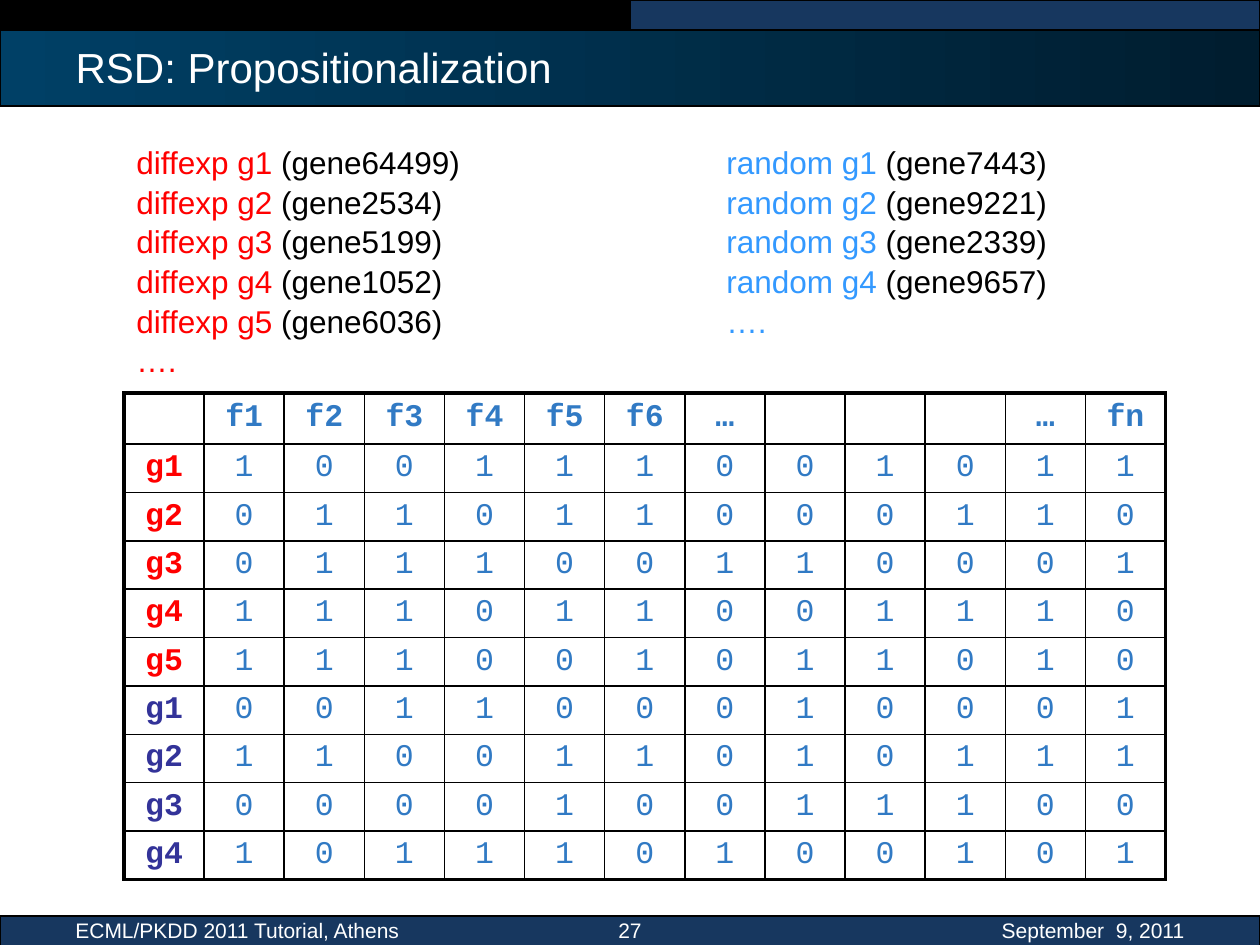
import pptx
import pptx.dml.color
import pptx.enum.shapes
import pptx.enum.text
import pptx.oxml
import pptx.oxml.ns
import pptx.util

PX = 914400 / 126
COLORS = {
    "black": "000000", "white": "FFFFFF", "navy": "17375F",
    "band_start": "004066", "band_end": "001D2F",
    "red": "FF0000", "sky": "3399FF", "indigo": "333399", "blue": "317AC4",
}
ALIGN = pptx.enum.text.PP_ALIGN
ANCHOR = pptx.enum.text.MSO_ANCHOR

DIFFEXP = ["gene64499", "gene2534", "gene5199", "gene1052", "gene6036"]
RANDOM = ["gene7443", "gene9221", "gene2339", "gene9657"]
FEATURES = ["f1", "f2", "f3", "f4", "f5", "f6", "…", "", "", "", "…", "fn"]
MATRIX = [
    ("g1", "red", "100111001011"),
    ("g2", "red", "011011000110"),
    ("g3", "red", "011100110001"),
    ("g4", "red", "111011001110"),
    ("g5", "red", "111001011010"),
    ("g1", "indigo", "001100010001"),
    ("g2", "indigo", "110011010111"),
    ("g3", "indigo", "000010011100"),
    ("g4", "indigo", "101110100101"),
]


def emu(box):
    return [pptx.util.Emu(round(length * PX)) for length in box]


def rgb(name):
    return pptx.dml.color.RGBColor.from_string(COLORS[name])


def add_span(para, text, size, color, font="Arial", bold=False):
    span = para.add_run()
    span.text = text
    span.font.size = pptx.util.Pt(size)
    span.font.name = font
    span.font.bold = bold
    span.font.color.rgb = rgb(color)


def add_text_frame(page, box):
    frame = page.shapes.add_textbox(*emu(box)).text_frame
    frame.word_wrap = True
    return frame


def add_band(page, box, colors):
    """Draw an outlined bar; two colours make a left-to-right gradient."""
    band = page.shapes.add_shape(pptx.enum.shapes.MSO_SHAPE.RECTANGLE, *emu(box))
    band.shadow.inherit = False
    band.line.color.rgb = rgb("black")
    band.line.width = pptx.util.Pt(0.75)
    if len(colors) == 1:
        band.fill.solid()
        band.fill.fore_color.rgb = rgb(colors[0])
    else:
        band.fill.gradient()
        band.fill.gradient_angle = 0
        for stop, color in zip(band.fill.gradient_stops, colors):
            stop.color.rgb = rgb(color)
    return band


def add_header(page, box, text):
    left, top, width, height = box
    half = width // 2
    title_band = add_band(page, (left, top + 26, width, height - 26),
                          ["band_start", "band_end"])
    add_band(page, (left, top, half, 30), ["black"])
    add_band(page, (left + half, top, half, 30), ["navy"])
    title = page.shapes.title
    title_band.element.addnext(title.element)
    title.left, title.top, title.width, title.height = emu(
        (left + 63, top + 38, width - 126, 57))
    title.text_frame.vertical_anchor = ANCHOR.MIDDLE
    para = title.text_frame.paragraphs[0]
    para.alignment = ALIGN.LEFT
    add_span(para, text, 24, "white")


def add_footer(page, box, entries):
    left, top, width, height = box
    add_band(page, box, ["navy"])
    for text, offset, span_width, alignment in entries:
        frame = add_text_frame(page, (left + offset, top - 5, span_width, height))
        para = frame.paragraphs[0]
        para.alignment = alignment
        add_span(para, text, 12, "white")


def add_gene_list(page, box, label, genes, color):
    frame = add_text_frame(page, box)
    lines = [(f"{label} g{number} ", f"({gene})")
             for number, gene in enumerate(genes, 1)]
    for index, (name, gene) in enumerate(lines + [("….", "")]):
        para = frame.add_paragraph() if index else frame.paragraphs[0]
        para.line_spacing = 1.05
        add_span(para, name, 18, color)
        if gene:
            add_span(para, gene, 18, "black")


def set_borders(cell, widths):
    """Set left, right, top and bottom border widths in points."""
    properties = cell._tc.get_or_add_tcPr()
    for index, (side, width) in enumerate(zip("LRTB", widths)):
        properties.insert(index, pptx.oxml.parse_xml(
            f'<a:ln{side} {pptx.oxml.ns.nsdecls("a")} w="{pptx.util.Pt(width)}">'
            f'<a:solidFill><a:srgbClr val="{COLORS["black"]}"/></a:solidFill>'
            f'</a:ln{side}>'))


def add_feature_table(page, box):
    rows = [("", "blue", FEATURES)] + MATRIX
    row_count, column_count = len(rows), len(FEATURES) + 1
    table = page.shapes.add_table(row_count, column_count, *emu(box)).table
    for row, (gene, gene_color, values) in enumerate(rows):
        for column, text in enumerate([gene, *values]):
            cell = table.cell(row, column)
            cell.fill.background()
            cell.vertical_anchor = ANCHOR.MIDDLE
            edges = (column == 0, column == column_count - 1,
                     row == 0, row == row_count - 1)
            set_borders(cell, [2.25 if edge else 1 for edge in edges])
            if text:
                para = cell.text_frame.paragraphs[0]
                para.alignment = ALIGN.CENTER
                add_span(para, text, 18, "blue" if column else gene_color,
                         "Courier New", bold=row == 0 or column == 0)


def main():
    deck = pptx.Presentation()
    deck.slide_width, deck.slide_height = emu((1260, 945))
    page = deck.slides.add_slide(deck.slide_layouts.get_by_name("Title Only"))
    add_header(page, (0, 0, 1260, 106), "RSD: Propositionalization")
    add_feature_table(page, (124, 393, 1042, 484))
    add_gene_list(page, (124, 135, 675, 265), "diffexp", DIFFEXP, "red")
    add_gene_list(page, (714, 135, 546, 204), "random", RANDOM, "sky")
    add_footer(page, (0, 916, 1260, 30), [
        ("September  9, 2011", 903, 294, ALIGN.RIGHT),
        ("ECML/PKDD 2011 Tutorial, Athens", 63, 399, ALIGN.LEFT),
        ("27", 567, 126, ALIGN.CENTER),
    ])
    deck.save("out.pptx")


if __name__ == "__main__":
    main()
